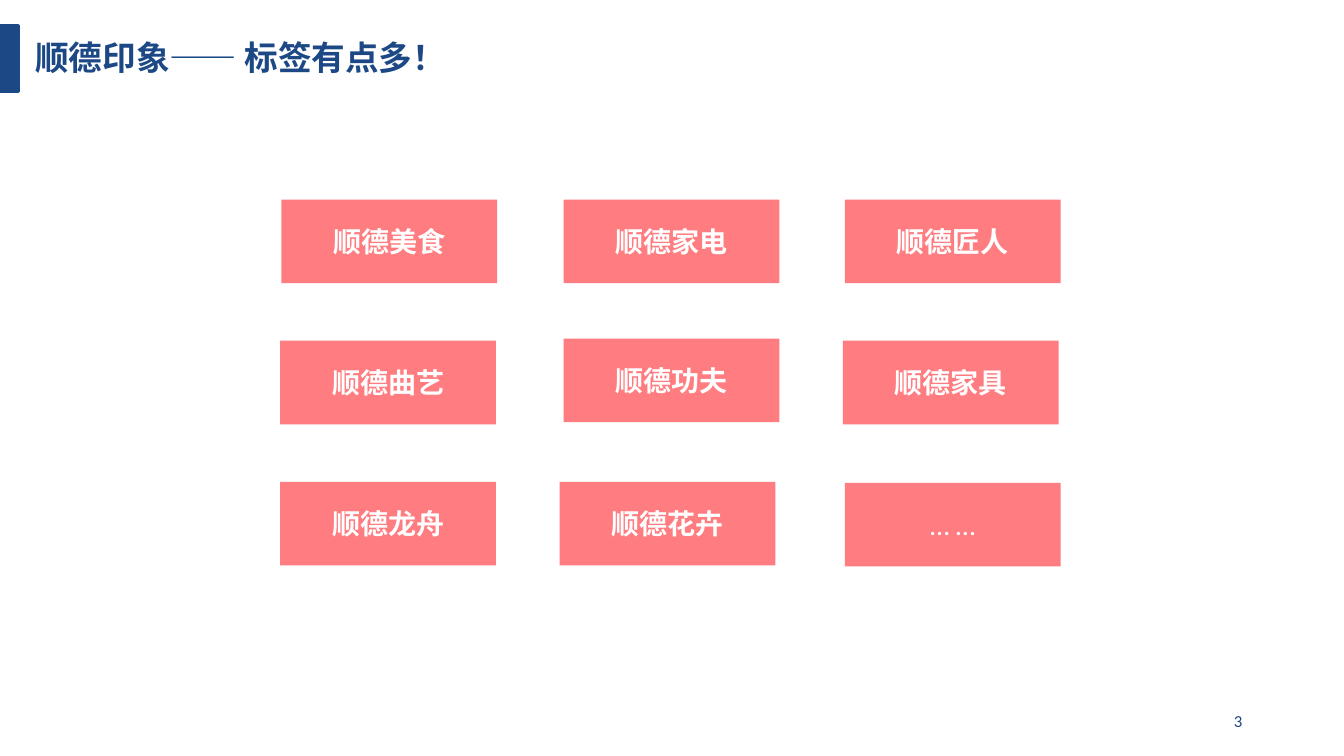
from dataclasses import dataclass

from lxml.etree import SubElement
from pptx import Presentation
from pptx.dml.color import RGBColor
from pptx.enum.shapes import MSO_SHAPE
from pptx.enum.text import MSO_ANCHOR, PP_ALIGN
from pptx.oxml.ns import qn
from pptx.util import Emu, Pt

PX = 9144


@dataclass(frozen=True)
class Theme:
    navy: RGBColor = RGBColor(0x1C, 0x48, 0x85)
    coral: RGBColor = RGBColor(0xFF, 0x7C, 0x80)
    white: RGBColor = RGBColor(0xFF, 0xFF, 0xFF)
    latin: str = "Calibri"
    chinese: str = "Noto Sans CJK SC"
    title_size: int = 24
    card_size: int = 20
    number_size: int = 12


THEME = Theme()

CARDS = [
    [("顺德美食", 0, 0), ("顺德家电", 0, 0), ("顺德匠人", -1, 0)],
    [("顺德曲艺", -1, 0), ("顺德功夫", 0, -2), ("顺德家具", -3, 0)],
    [("顺德龙舟", -1, 0), ("顺德花卉", -4, 0), ("… …", -1, 1)],
]


def px(*lengths):
    return [Emu(length * PX) for length in lengths]


def write(shape, text, size, color, align, font, bold=False):
    frame = shape.text_frame
    frame.text = text
    frame.word_wrap = True
    frame.vertical_anchor = MSO_ANCHOR.MIDDLE
    para = frame.paragraphs[0]
    para.alignment = align
    span = para.runs[0]
    span.font.name = font
    span.font.size = Pt(size)
    span.font.bold = bold
    span.font.color.rgb = color
    east_asian = SubElement(span.font._element, qn("a:ea"))
    east_asian.set("typeface", THEME.chinese)


def add_block(page, left, top, width, height, color):
    block = page.shapes.add_shape(MSO_SHAPE.RECTANGLE, *px(left, top, width, height))
    block.shadow.inherit = False
    block.fill.solid()
    block.fill.fore_color.rgb = color
    block.line.fill.background()
    return block


def add_header(page, left, top, width, height):
    title = page.shapes.title
    title.left, title.top, title.width, title.height = px(left + 25, top + 7, width - 25, 50)
    write(title, "顺德印象—— 标签有点多！", THEME.title_size, THEME.navy,
          PP_ALIGN.LEFT, THEME.chinese, bold=True)
    marker = add_block(page, left, top, 18, height, THEME.navy)
    marker.line.color.rgb = THEME.navy
    marker.line.width = Pt(2)


def add_card_grid(page, left, top, width, height):
    card_width, card_height = 214, 83
    column_step = (width - card_width) // 2
    row_step = (height - card_height) // 2
    for row, cards in enumerate(CARDS):
        for column, (label, shift_x, shift_y) in enumerate(cards):
            card = add_block(page, left + column * column_step + shift_x,
                             top + row * row_step + shift_y,
                             card_width, card_height, THEME.coral)
            write(card, label, THEME.card_size, THEME.white, PP_ALIGN.CENTER,
                  THEME.latin, bold=label.startswith("顺德"))


def add_page_number(page, left, top, width, height):
    box = page.shapes.add_textbox(*px(left, top, width, height))
    write(box, "3", THEME.number_size, THEME.navy, PP_ALIGN.RIGHT, THEME.latin)


def main():
    deck = Presentation()
    deck.slide_width, deck.slide_height = px(1333, 750)
    page = deck.slides.add_slide(deck.slide_layouts[5])
    add_page_number(page, 942, 695, 300, 40)
    add_card_grid(page, 279, 198, 774, 363)
    add_header(page, 0, 25, 1281, 66)
    deck.save("out.pptx")


if __name__ == "__main__":
    main()
